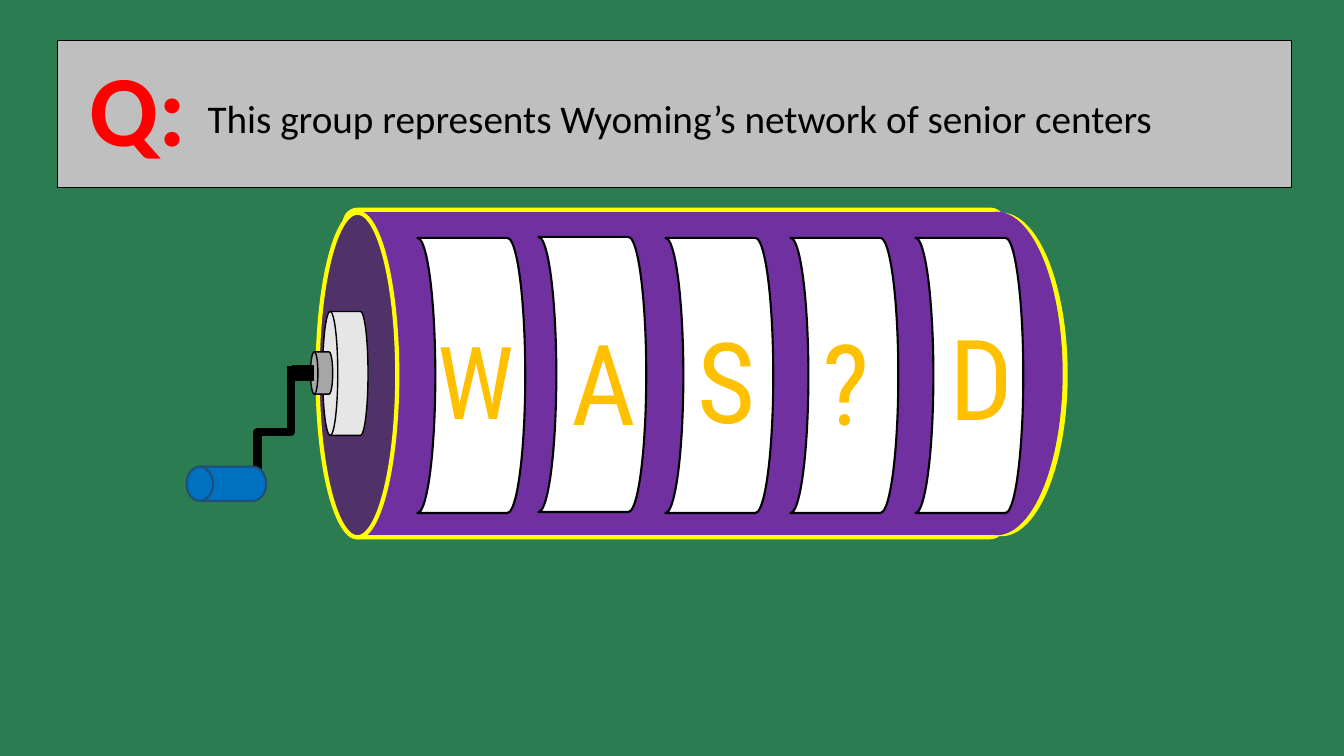
from lxml import etree
from pptx import Presentation
from pptx.dml.color import RGBColor
from pptx.enum.shapes import MSO_CONNECTOR, MSO_SHAPE as Shape
from pptx.enum.text import MSO_AUTO_SIZE, PP_ALIGN as Align
from pptx.oxml.ns import qn
from pptx.util import Emu, Pt

PX = 9144  # 100 px to the inch
SLIDE_SIZE = (1333, 750)
GREEN, PURPLE, DARK_PURPLE = "2C7C52", "7030A0", "503268"
YELLOW, GOLD, BLUE, NAVY = "FFFF00", "FFC000", "0070C0", "1F4E79"
RED, DARK_RED = "FF0000", "C00000"
BLACK, WHITE, PALE_GREY, GREY, SILVER = "000000", "FFFFFF", "E7E6E6", "A6A6A6", "BFBFBF"

DRUM = Shape.FLOWCHART_DIRECT_ACCESS_STORAGE
WINDOW = Shape.FLOWCHART_STORED_DATA
WINDOW_SIZE = (107, 273)

# preset, box, fill, line colour, line points, flipped
BARREL = [
    (Shape.OVAL, (928, 211, 131, 321), YELLOW, None, 0, False),
    (Shape.ROUNDED_RECTANGLE, (342, 208, 653, 325), PURPLE, YELLOW, 3, False),
    (Shape.OVAL, (315, 211, 79, 322), DARK_PURPLE, YELLOW, 3, False),
    (DRUM, (320, 309, 45, 123), PALE_GREY, BLACK, 1, True),
    (Shape.OVAL, (923, 210, 131, 321), PURPLE, None, 0, False),
    (DRUM, (308, 349, 22, 42), GREY, BLACK, 1, True),
    (Shape.RECTANGLE, (290, 363, 21, 14), BLACK, BLACK, 1, False),
]
CRANK_BOX = (207, 412, 130, 33)
HANDLE = (DRUM, (185, 463, 79, 34), BLUE, NAVY, 1.5, True)

# window left and top, letter, letter box, letter points
REELS = [
    ((414, 236), "W", (424, 311, 102, 131), 72),
    ((534, 235), "A", (557, 306, 77, 145), 80),
    ((660, 236), "S", (682, 304, 78, 145), 80),
    ((784, 236), "?", (806, 306, 79, 145), 80),
    ((908, 236), "D", (932, 301, 82, 145), 80),
]
BANNER = (Shape.RECTANGLE, (57, 40, 1224, 146), SILVER, BLACK, 1, False)
MARK, MARK_BOX = "Q:", (79, 40, 146, 131)
QUESTION = "This group represents Wyoming’s network of senior centers"
QUESTION_BOX = (196, 89, 1068, 57)


def emu(lengths):
    return [Emu(length * PX) for length in lengths]


def rgb(hex_colour):
    return RGBColor.from_string(hex_colour)


def add_part(slide, preset, box, fill, line, points, flipped):
    part = slide.shapes.add_shape(preset, *emu(box))
    part.shadow.inherit = False
    part.fill.solid()
    part.fill.fore_color.rgb = rgb(fill)
    if line:
        part.line.color.rgb = rgb(line)
        part.line.width = Pt(points)
    else:
        part.line.fill.background()
    if flipped:
        part.element.spPr.find(qn("a:xfrm")).set("flipH", "1")
    return part


def add_text(slide, text, box, size, colour, font="Calibri", bold=False,
             wrap=True, align=Align.LEFT, outline=None):
    textbox = slide.shapes.add_textbox(*emu(box))
    frame = textbox.text_frame
    frame.word_wrap = wrap
    frame.auto_size = MSO_AUTO_SIZE.SHAPE_TO_FIT_TEXT
    paragraph = frame.paragraphs[0]
    paragraph.alignment = align
    run = paragraph.add_run()
    run.text = text
    run.font.name = font
    run.font.size = Pt(size)
    run.font.bold = bold
    run.font.color.rgb = rgb(colour)
    if outline:
        edge = etree.Element(qn("a:ln"), w=str(Pt(2)))
        edge_fill = etree.SubElement(edge, qn("a:solidFill"))
        etree.SubElement(edge_fill, qn("a:srgbClr"), val=outline)
        run.font._element.insert(0, edge)


def add_crank(slide):
    """Draw the bent rod, laid out flat and then turned a quarter clockwise."""
    left, top, width, height = CRANK_BOX
    crank = slide.shapes.add_connector(
        MSO_CONNECTOR.ELBOW, *emu((left, top, left + width, top + height)))
    crank.line.color.rgb = rgb(BLACK)
    crank.line.width = Pt(6)
    properties = crank.element.spPr
    properties.find(qn("a:xfrm")).set("rot", str(90 * 60000))
    etree.SubElement(properties, qn("a:effectLst"))


def main():
    deck = Presentation()
    deck.slide_width, deck.slide_height = emu(SLIDE_SIZE)
    slide = deck.slides.add_slide(deck.slide_layouts[6])
    slide.background.fill.solid()
    slide.background.fill.fore_color.rgb = rgb(GREEN)

    for piece in BARREL:
        part = add_part(slide, *piece)
        if piece[0] == Shape.ROUNDED_RECTANGLE:
            part.adjustments[0] = 0.04
    for corner, *_ in REELS:
        add_part(slide, WINDOW, corner + WINDOW_SIZE, WHITE, BLACK, 1.5, True)
    add_crank(slide)
    add_part(slide, *HANDLE)
    for _, letter, box, size in REELS:
        add_text(slide, letter, box, size, GOLD, font="Roboto Condensed", wrap=False)

    add_part(slide, *BANNER)
    add_text(slide, MARK, MARK_BOX, 72, RED, bold=True, outline=DARK_RED)
    add_text(slide, QUESTION, QUESTION_BOX, 28, BLACK, align=Align.JUSTIFY)
    deck.save("out.pptx")


if __name__ == "__main__":
    main()
